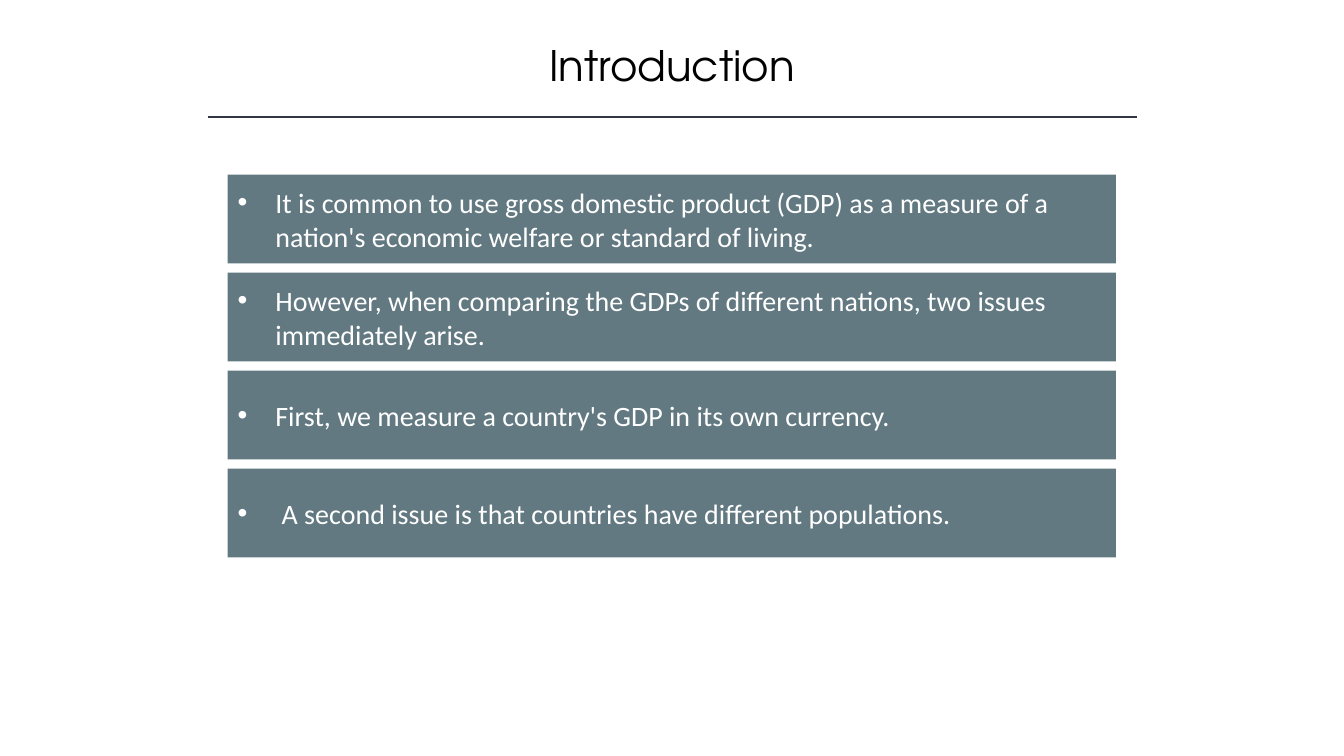
"""Build the Introduction slide with four bulleted statement bars."""
from lxml.etree import SubElement
from pptx import Presentation
from pptx.dml.color import RGBColor
from pptx.enum.shapes import MSO_CONNECTOR, MSO_SHAPE
from pptx.enum.text import MSO_ANCHOR, PP_ALIGN
from pptx.oxml.ns import qn
from pptx.util import Cm, Pt

COLORS = {"title": "000000", "rule": "323542", "bar": "627981", "text": "FFFFFF"}
STATEMENTS = [
    "It is common to use gross domestic product (GDP) as a measure of a "
    "nation's economic welfare or standard of living.",
    "However, when comparing the GDPs of different nations, two issues immediately arise.",
    "First, we measure a country's GDP in its own currency.",
    " A second issue is that countries have different populations.",
]
BAR_TOP, BAR_PITCH = 4.4, 2.47


def style_text(para, font_name, size, color):
    """Set the font of every run in a paragraph."""
    for span in para.runs:
        span.font.name = font_name
        span.font.size = Pt(size)
        span.font.color.rgb = RGBColor.from_string(COLORS[color])


deck = Presentation()
deck.slide_width, deck.slide_height = Cm(33.87), Cm(19.05)
page = deck.slides.add_slide(deck.slide_layouts.get_by_name("Title Only"))

title = page.shapes.title
title.left, title.top, title.width, title.height = Cm(4.24), Cm(0.86), Cm(25.4), Cm(1.55)
title.text_frame.text = "Introduction"
title.text_frame.vertical_anchor = MSO_ANCHOR.MIDDLE
title.text_frame.paragraphs[0].alignment = PP_ALIGN.CENTER
style_text(title.text_frame.paragraphs[0], "TeX Gyre Adventor", 30, "title")

rule = page.shapes.add_connector(MSO_CONNECTOR.STRAIGHT, Cm(5.23), Cm(2.95), Cm(28.65), Cm(2.95))
rule.line.color.rgb = RGBColor.from_string(COLORS["rule"])
rule.line.width = Pt(1)
SubElement(rule._element.spPr, qn("a:effectLst"))

for index, statement in enumerate(STATEMENTS):
    bar = page.shapes.add_shape(
        MSO_SHAPE.RECTANGLE, Cm(5.74), Cm(BAR_TOP + index * BAR_PITCH), Cm(22.38), Cm(2.24))
    bar.shadow.inherit = False
    bar.fill.solid()
    bar.fill.fore_color.rgb = RGBColor.from_string(COLORS["bar"])
    bar.line.fill.background()

    frame = bar.text_frame
    frame.word_wrap = True
    frame.vertical_anchor = MSO_ANCHOR.MIDDLE
    para = frame.paragraphs[0]
    para.text = statement
    para.alignment = PP_ALIGN.LEFT
    properties = para._p.get_or_add_pPr()
    properties.set("marL", str(Cm(0.95)))
    properties.set("indent", str(Cm(-0.95)))
    SubElement(properties, qn("a:buFont"), typeface="Arial")
    SubElement(properties, qn("a:buChar"), char="•")
    style_text(para, "Calibri", 20, "text")

deck.save("out.pptx")
